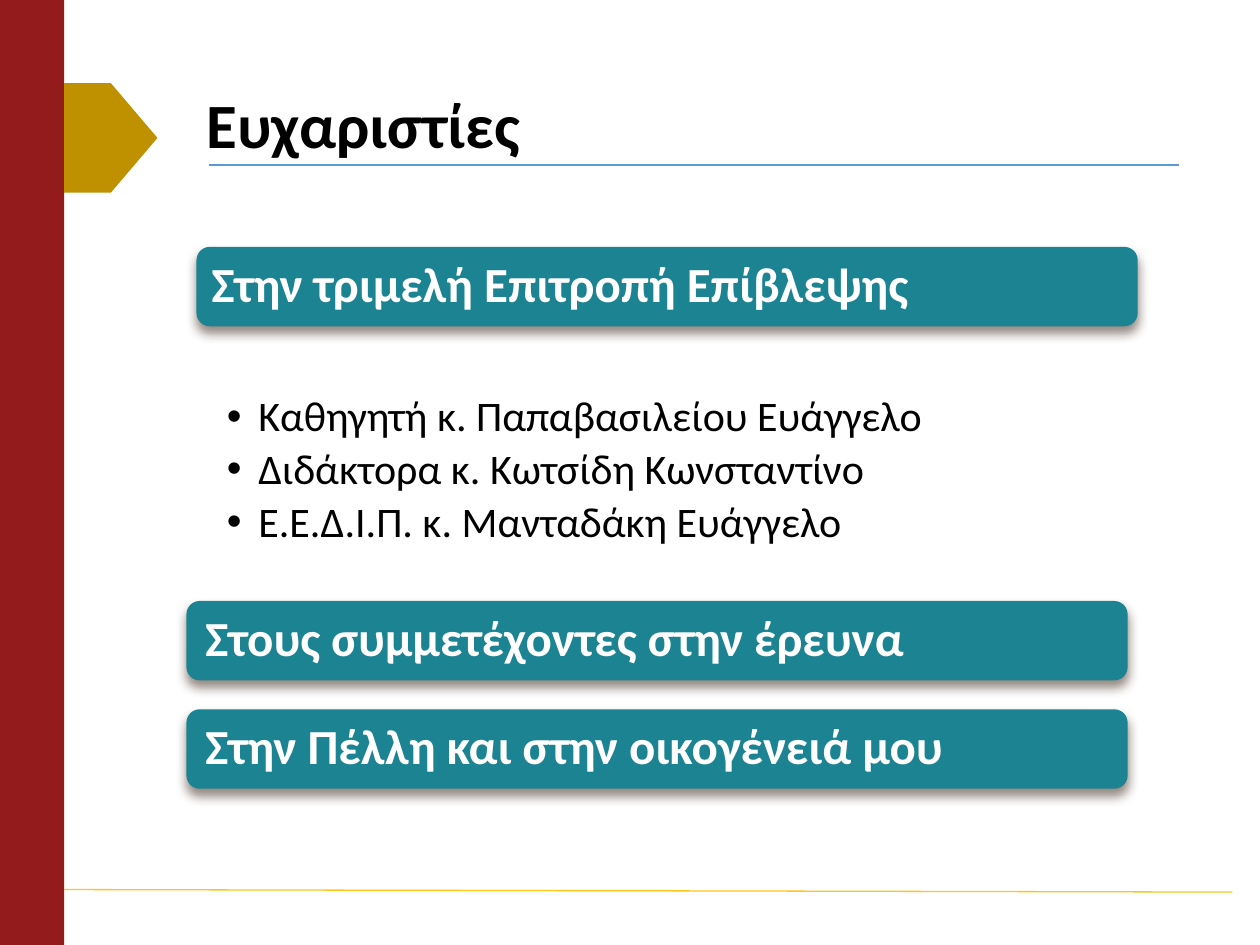
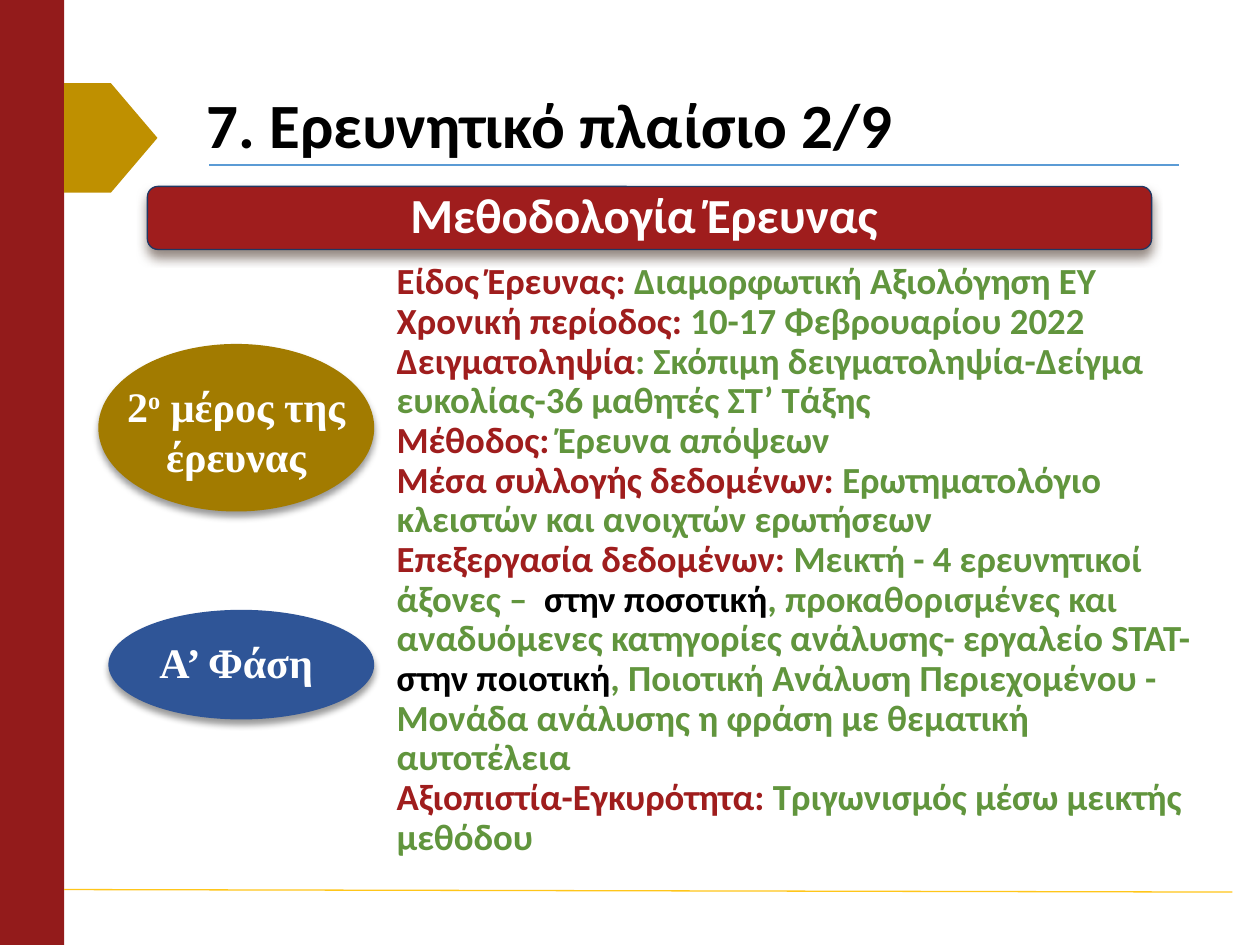
from lxml import etree
from pptx import Presentation
from pptx.dml.color import RGBColor
from pptx.enum.shapes import MSO_CONNECTOR, MSO_SHAPE
from pptx.enum.text import MSO_ANCHOR, PP_ALIGN
from pptx.oxml.ns import qn
from pptx.util import Inches, Pt

RECTANGLE = MSO_SHAPE.RECTANGLE
ROUNDED = MSO_SHAPE.ROUNDED_RECTANGLE
PENTAGON = MSO_SHAPE.PENTAGON
OVAL = MSO_SHAPE.OVAL
STRAIGHT = MSO_CONNECTOR.STRAIGHT
MIDDLE, TOP = MSO_ANCHOR.MIDDLE, MSO_ANCHOR.TOP
LEFT, CENTER = PP_ALIGN.LEFT, PP_ALIGN.CENTER

BLACK = RGBColor(0x00, 0x00, 0x00)
WHITE = RGBColor(0xFF, 0xFF, 0xFF)
BAND_RED = RGBColor(0x93, 0x1B, 0x1B)
RED = RGBColor(0x9F, 0x1D, 0x1D)
GOLD = RGBColor(0xBF, 0x90, 0x00)
DARK_GOLD = RGBColor(0xA2, 0x7B, 0x00)
YELLOW = RGBColor(0xFF, 0xC6, 0x1A)
SKY = RGBColor(0x5B, 0x9B, 0xD5)
BLUE = RGBColor(0x2F, 0x55, 0x97)
NAVY = RGBColor(0x20, 0x38, 0x64)
TEAL = RGBColor(0x1B, 0x83, 0x91)
GREEN = RGBColor(0x61, 0x95, 0x3D)
BROWN = RGBColor(0x4E, 0x3B, 0x30)

BANNER_SHADOW = (BROWN, 60, 6, 4)
OVAL_SHADOW = (BLACK, 40, 4, 3)
TITLE_ONLY = 5


def write_text(frame, paragraphs, font="Calibri", size=28, color=WHITE, bold=True,
               align=LEFT, anchor=MIDDLE, inset=(0.1, 0.05), spacing=0.9,
               after=0, bullet=None, indent=0.25):
    frame.word_wrap = True
    frame.vertical_anchor = anchor
    frame.margin_left = frame.margin_right = Inches(inset[0])
    frame.margin_top = frame.margin_bottom = Inches(inset[1])
    for index, runs in enumerate(paragraphs):
        para = frame.add_paragraph() if index else frame.paragraphs[0]
        para.alignment = align
        para.line_spacing = spacing
        para.space_before = Pt(0)
        para.space_after = Pt(after)
        if bullet:
            properties = para._p.get_or_add_pPr()
            properties.set("marL", str(Inches(indent)))
            properties.set("indent", str(-Inches(indent)))
            etree.SubElement(properties, qn("a:buFont"), typeface="Arial")
            etree.SubElement(properties, qn("a:buChar"), char=bullet)
        for text, run_color, raised in runs:
            span = para.add_run()
            span.text = text
            span.font.name = font
            span.font.size = Pt(size)
            span.font.bold = bold
            span.font.color.rgb = run_color or color
            if raised:
                span._r.get_or_add_rPr().set("baseline", "30000")


def plain(*lines):
    return [[(line, None, False)] for line in lines]


class Slides:
    def __init__(self):
        self.deck = Presentation()
        self.deck.slide_width = Inches(10)
        self.deck.slide_height = Inches(7.5)
        self.page = None

    def new_page(self, title):
        self.page = self.deck.slides.add_slide(self.deck.slide_layouts[TITLE_ONLY])
        self.shape(RECTANGLE, 0, 0, 0.51, 7.5, BAND_RED)
        self.shape(PENTAGON, 0.51, 0.66, 0.74, 0.87, GOLD)
        self.line(1.66, 1.31, 9.36, 1.31, SKY)
        self.line(0.51, 7.06, 9.78, 7.08, YELLOW)
        box = self.page.shapes.title
        box.left, box.top = Inches(1.54), Inches(0.6)
        box.width, box.height = Inches(7.87), Inches(0.84)
        write_text(box.text_frame, plain(title), size=36, color=BLACK)

    def shape(self, kind, left, top, width, height, fill, outline=None, shadow=None):
        shape = self.page.shapes.add_shape(
            kind, Inches(left), Inches(top), Inches(width), Inches(height))
        shape.fill.solid()
        shape.fill.fore_color.rgb = fill
        if outline:
            shape.line.color.rgb = outline
            shape.line.width = Pt(0.75)
        else:
            shape.line.fill.background()
        shape.shadow.inherit = False
        if shadow:
            color, opacity, blur, distance = shadow
            effects = shape._element.spPr.find(qn("a:effectLst"))
            outer = etree.SubElement(
                effects, qn("a:outerShdw"), blurRad=str(Pt(blur)),
                dist=str(Pt(distance)), dir="5400000", rotWithShape="0")
            tint = etree.SubElement(outer, qn("a:srgbClr"), val=str(color))
            etree.SubElement(tint, qn("a:alpha"), val=str(opacity * 1000))
        return shape

    def line(self, x1, y1, x2, y2, color):
        line = self.page.shapes.add_connector(
            STRAIGHT, Inches(x1), Inches(y1), Inches(x2), Inches(y2))
        line.line.color.rgb = color
        line.line.width = Pt(0.75)
        etree.SubElement(line._element.spPr, qn("a:effectLst"))

    def text(self, left, top, width, height, paragraphs, **style):
        box = self.page.shapes.add_textbox(
            Inches(left), Inches(top), Inches(width), Inches(height))
        write_text(box.text_frame, paragraphs, **style)

    def banner(self, left, top, width, height, text, fill, outline=None, **style):
        shape = self.shape(ROUNDED, left, top, width, height, fill, outline, BANNER_SHADOW)
        write_text(shape.text_frame, plain(text), **style)

    def oval(self, left, top, width, height, fill, label_top, label_height, paragraphs):
        self.shape(OVAL, left, top, width, height, fill, shadow=OVAL_SHADOW)
        self.text(0.86, label_top, 2.03, label_height, paragraphs, align=CENTER,
                  font="Times New Roman", size=24, spacing=1, anchor=TOP)


def build_thanks(slides):
    slides.new_page("Ευχαριστίες")
    banners = [
        (1.56, 1.96, 0.09, "Στην τριμελή Επιτροπή Επίβλεψης"),
        (1.48, 4.77, 0.12, "Στους συμμετέχοντες στην έρευνα"),
        (1.48, 5.63, 0.12, "Στην Πέλλη και στην οικογένειά μου"),
    ]
    for left, top, inset, text in banners:
        slides.banner(left, top, 7.47, 0.63, text, TEAL, inset=(inset, 0.05))
    committee = plain("Καθηγητή κ. Παπαβασιλείου Ευάγγελο",
                      "Διδάκτορα κ. Κωτσίδη Κωνσταντίνο",
                      "Ε.Ε.Δ.Ι.Π. κ. Μανταδάκη Ευάγγελο")
    slides.text(1.56, 3.1, 7.47, 1.36, committee, size=24, color=BLACK, bold=False,
                anchor=TOP, inset=(0.24, 0.04), after=4.2, bullet="•")


def build_method(slides):
    slides.new_page("7. Ερευνητικό πλαίσιο 2/9")
    slides.banner(1.17, 1.48, 7.97, 0.5, "Μεθοδολογία Έρευνας ", RED, NAVY, align=CENTER)
    slides.oval(0.78, 2.73, 2.19, 1.33, DARK_GOLD, 2.97, 0.91,
                [[("2", None, False), ("ο", None, True),
                  (" μέρος της έρευνας", None, False)]])
    slides.oval(0.86, 4.84, 2.11, 0.87, BLUE, 5, 0.5, plain("Α’ Φάση"))
    details = [
        ("Είδος Έρευνας: ", "Διαμορφωτική Αξιολόγηση ΕΥ"),
        ("Χρονική περίοδος: ", "10-17 Φεβρουαρίου 2022"),
        ("Δειγματοληψία",
         ": Σκόπιμη δειγματοληψία-Δείγμα ευκολίας-36 μαθητές ΣΤ’ Τάξης"),
        ("Μέθοδος: ", "Έρευνα απόψεων"),
        ("Μέσα συλλογής δεδομένων: ",
         "Ερωτηματολόγιο κλειστών και ανοιχτών ερωτήσεων"),
        ("Επεξεργασία δεδομένων: ", "Μεικτή - 4 ερευνητικοί άξονες –  ",
         "στην ποσοτική",
         ", προκαθορισμένες και αναδυόμενες κατηγορίες ανάλυσης- εργαλείο STAT- ",
         "στην ποιοτική",
         ", Ποιοτική Ανάλυση Περιεχομένου - Μονάδα ανάλυσης η φράση με θεματική αυτοτέλεια"),
        ("Αξιοπιστία-Εγκυρότητα:", " Τριγωνισμός μέσω μεικτής μεθόδου"),
    ]
    colors = (RED, GREEN, BLACK, GREEN, BLACK, GREEN)
    paragraphs = [[(text, color, False) for text, color in zip(parts, colors)]
                  for parts in details]
    slides.text(3.05, 2.03, 6.64, 4.84, paragraphs, size=21, inset=(0.1, 0.1))


def main():
    slides = Slides()
    build_thanks(slides)
    build_method(slides)
    slides.deck.save("out.pptx")


if __name__ == "__main__":
    main()
